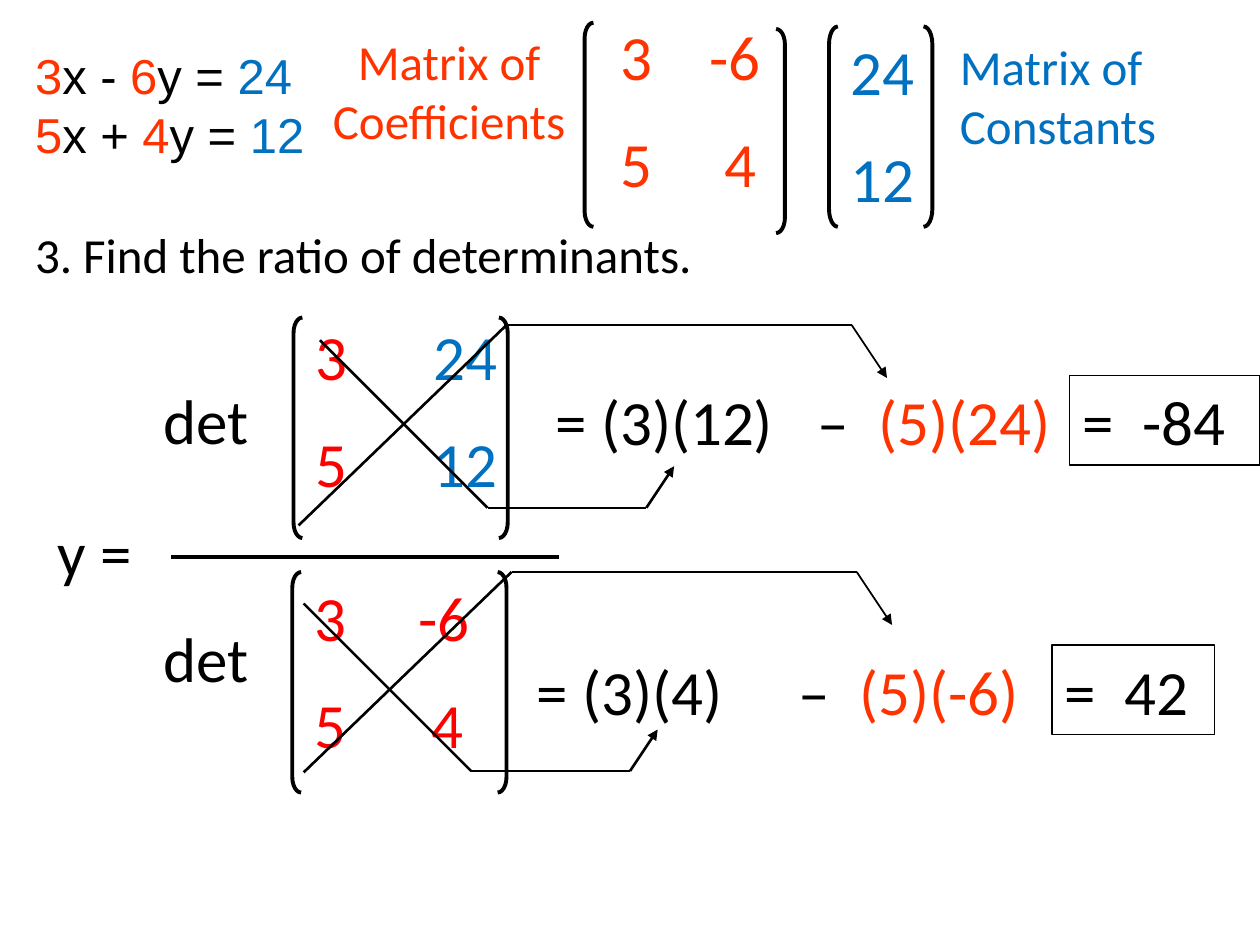
from itertools import accumulate

from lxml.etree import SubElement
from pptx import Presentation
from pptx.dml.color import RGBColor
from pptx.enum.shapes import MSO_CONNECTOR, MSO_SHAPE
from pptx.enum.text import PP_ALIGN
from pptx.oxml.ns import qn
from pptx.util import Inches, Pt

SLIDE_W, SLIDE_H = Inches(10), Inches(7.5)
COLUMN, ROW = SLIDE_W / 10, SLIDE_H / 7.5
COLORS = {"ink": "000000", "coefficient": "FF3300", "constant": "0070C0", "entry": "FF0000"}
BRACKET_W, OPERATOR_TAB = 0.07, 0.48
DESCENT = [(1.33, 1.33), (1.26, 0), (0.22, -0.33)]
ASCENT = [(1.65, -1.59), (2.74, 0), (0.28, 0.42)]


def rgb(name):
    return RGBColor.from_string(COLORS[name])


def place(*box):
    """Turn left, top, width, height in columns and rows into slide lengths."""
    return [round(value * unit) for value, unit in zip(box, (COLUMN, ROW, COLUMN, ROW))]


def write(frame, lines, size=36, font="Calibri", align=PP_ALIGN.LEFT, gap=18, tabs=()):
    """Fill a frame; each line is a list of (text, colour) and may have a tab stop."""
    for index, line in enumerate(lines):
        paragraph = frame.paragraphs[0] if index == 0 else frame.add_paragraph()
        paragraph.alignment = align
        paragraph.space_before = Pt(gap if index else 0)
        if index < len(tabs):
            stops = SubElement(paragraph._p.get_or_add_pPr(), qn("a:tabLst"))
            SubElement(stops, qn("a:tab"), pos=str(round(tabs[index] * COLUMN)), algn="l")
        for words, color in line:
            run = paragraph.add_run()
            run.text = words
            for key, value in {"size": Pt(size), "name": font}.items():
                setattr(run.font, key, value)
            run.font.color.rgb = rgb(color)


def add_text(slide, box, lines, wrap=True, inset=0.1, **style):
    frame = slide.shapes.add_textbox(*place(*box)).text_frame
    frame.word_wrap = wrap
    frame.margin_left = round(inset * COLUMN)
    write(frame, lines, **style)


def add_line(slide, start, end, width, arrow=False):
    line = slide.shapes.add_connector(MSO_CONNECTOR.STRAIGHT, *place(*start, *end))
    line.line.color.rgb = rgb("ink")
    line.line.width = Pt(width)
    SubElement(line._element.spPr, qn("a:effectLst"))
    if arrow:
        SubElement(line.line._get_or_add_ln(), qn("a:tailEnd"), type="triangle", w="med", len="med")


def add_brackets(slide, left, top, width, height, drop=0, curve=1.75):
    """Frame a matrix; drop lowers the right bracket."""
    sides = [(MSO_SHAPE.LEFT_BRACKET, left, top),
             (MSO_SHAPE.RIGHT_BRACKET, left + width - BRACKET_W, top + drop)]
    for kind, x, y in sides:
        bracket = slide.shapes.add_shape(kind, *place(x, y, BRACKET_W, height))
        bracket.shadow.inherit = False
        bracket.adjustments[0] = curve
        bracket.fill.background()
        bracket.line.color.rgb = rgb("ink")
        bracket.line.width = Pt(2.25)


def add_diagonal(slide, start, steps, widths):
    """Draw a diagonal that runs on to an arrow at its product."""
    points = list(accumulate(steps, lambda p, s: (p[0] + s[0], p[1] + s[1]), initial=start))
    for index, (begin, end) in enumerate(zip(points, points[1:])):
        add_line(slide, begin, end, widths[index], arrow=index == len(steps) - 1)


def add_result(slide, box, value):
    result = slide.shapes.add_shape(MSO_SHAPE.RECTANGLE, *place(*box))
    result.shadow.inherit = False
    result.fill.background()
    result.line.color.rgb = rgb("ink")
    result.line.width = Pt(0.75)
    result.text_frame.word_wrap = True
    write(result.text_frame, [[(f"=\t{value}", "ink")]], tabs=[OPERATOR_TAB])


def add_system(slide, left, top):
    """Place the equations and their two matrices."""
    rows = [("3", "x - ", "6", "y = ", "24"), ("5", "x + ", "4", "y = ", "12")]
    palette = ("coefficient", "ink", "coefficient", "ink", "constant")
    add_text(slide, (left, top + 0.13, 2.37, 1.04), [list(zip(row, palette)) for row in rows],
             wrap=False, size=28, font="Arial", gap=0)
    add_text(slide, (left + 1.8, top + 0.02, 3.17, 1.04),
             [[("Matrix of Coefficients", "coefficient")]], size=28, align=PP_ALIGN.CENTER)
    add_brackets(slide, left + 4.46, top, 1.59, 1.62, drop=0.05)
    add_text(slide, (left + 4.65, top - 0.09, 1.84, 2.52),
             [[("3\t-6", "coefficient")], [("5\t4", "coefficient")]], tabs=[0.7, 0.82])
    add_brackets(slide, left + 6.4, top + 0.03, 0.82, 1.59, curve=2)
    add_text(slide, (left + 6.47, top + 0.03, 1.84, 2.52),
             [[("24", "constant")], [("12", "constant")]])
    add_text(slide, (left + 7.34, top + 0.06, 2.75, 1.04),
             [[("Matrix of Constants", "constant")]], size=28)


def add_determinant(slide, left, top, part):
    """Place one determinant with its crossed diagonals and its expansion."""
    add_text(slide, (1.2, top + part["label"], 0.88, 0.71), [[("det", "ink")]], wrap=False)
    add_brackets(slide, left, top, 1.7, 1.75)
    add_text(slide, (left + 0.08, top + part["matrix"], 1.84, 1.75), part["rows"], tabs=part["tabs"])
    for key, steps, widths in [("down", DESCENT, (1.5, 1, 1.5)), ("up", ASCENT, (1.5, 1, 1))]:
        x, y = part[key]
        add_diagonal(slide, (left + x, top + y), steps, widths)
    main_left, cross_left, result_left, result_width = part["expansion"]
    baseline = top + part["baseline"]
    add_text(slide, (main_left, baseline, 2.08, 0.7), [[(part["main"], "ink")]])
    add_text(slide, (cross_left, baseline, 2.67, 0.71),
             [[("–\t", "ink"), (part["cross"], "coefficient")]], inset=0.35, tabs=[OPERATOR_TAB])
    add_result(slide, (result_left, baseline - 0.01, result_width, 0.71), part["result"])


NUMERATOR = {
    "label": 0.46, "matrix": -0.05, "baseline": 0.47, "tabs": [0.93, 0.93],
    "rows": [[("3\t", "entry"), ("24", "constant")], [("5\t", "entry"), ("12", "constant")]],
    "down": (0.21, 0.18), "up": (0.04, 1.65), "expansion": (4.31, 6.14, 8.49, 1.51),
    "main": "= (3)(12)", "cross": "(5)(24)", "result": "-84",
}
DENOMINATOR = {
    "label": 0.33, "matrix": 0, "baseline": 0.59, "tabs": [0.82, 0.93],
    "rows": [[("3\t-6", "entry")], [("5\t4", "entry")]],
    "down": (0.09, 0.25), "up": (0.09, 1.59), "expansion": (4.16, 5.99, 8.35, 1.29),
    "main": "= (3)(4)", "cross": "(5)(-6)", "result": "42",
}


def add_line_fixed_ends(slide, start, end, width):
    add_line(slide, start, end, width)


def main():
    deck = Presentation()
    deck.slide_width, deck.slide_height = SLIDE_W, SLIDE_H
    slide = deck.slides.add_slide(deck.slide_layouts[6])
    add_system(slide, 0.18, 0.18)
    add_text(slide, (0.18, 1.73, 7.3, 0.57),
             [[("3. Find the ratio of determinants.", "ink")]], size=28)
    add_text(slide, (0.36, 4.03, 0.9, 0.71), [[("y =", "ink")]], wrap=False)
    add_line(slide, (1.36, 4.42), (4.44, 4.42), 2.25)
    add_determinant(slide, 2.33, 2.52, NUMERATOR)
    add_determinant(slide, 2.32, 4.54, DENOMINATOR)
    deck.save("out.pptx")


if __name__ == "__main__":
    main()
